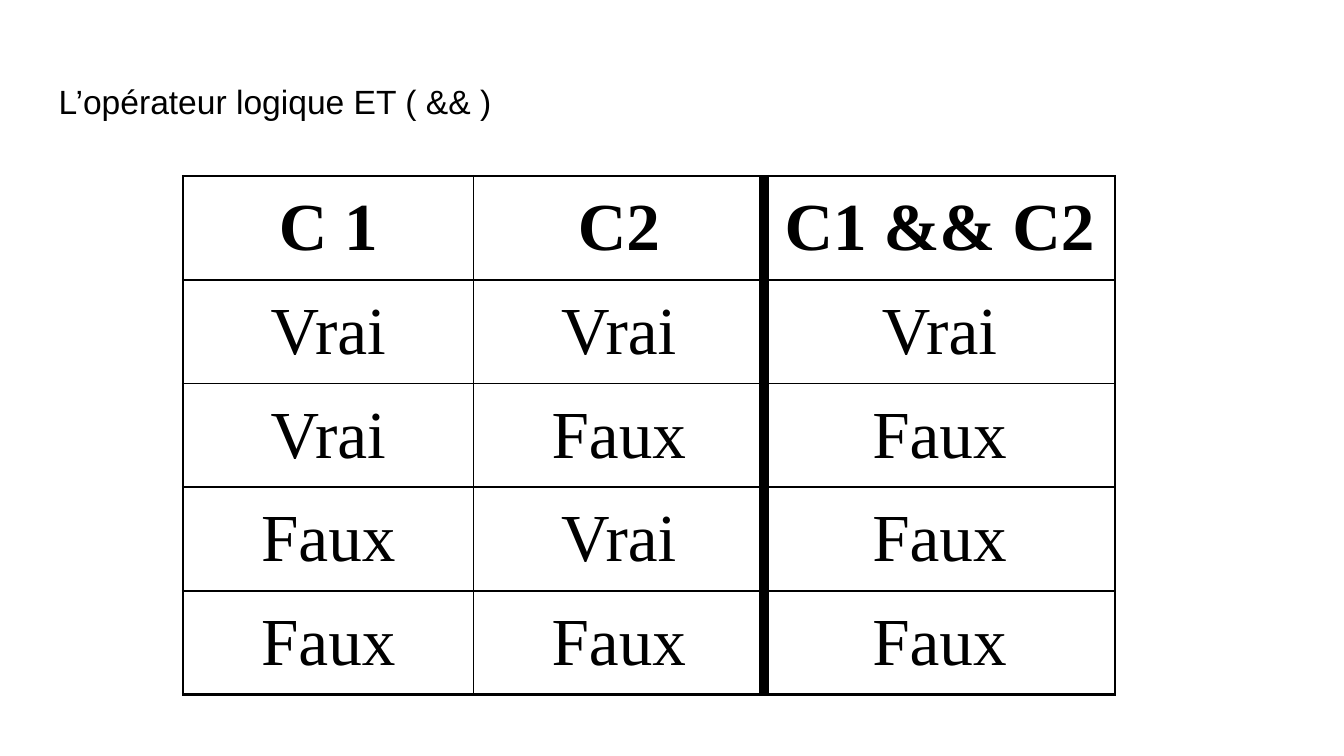
from dataclasses import dataclass

from lxml.etree import SubElement
from pptx import Presentation
from pptx.dml.color import RGBColor
from pptx.enum.text import MSO_ANCHOR, PP_ALIGN
from pptx.oxml.ns import qn
from pptx.util import Cm, Pt


@dataclass(frozen=True)
class Theme:
    """Colours, fonts and sizes of the slide."""

    ink: str = "000000"
    title_font: str = "Arial"
    title_size: int = 18
    table_font: str = "Times New Roman"
    table_size: int = 36


THEME = Theme()
TRUTH_TABLE = [
    ("C 1", "C2", "C1 && C2"),
    ("Vrai", "Vrai", "Vrai"),
    ("Vrai", "Faux", "Faux"),
    ("Faux", "Vrai", "Faux"),
    ("Faux", "Faux", "Faux"),
]
COLUMN_WIDTHS = (5.49, 5.49, 6.63)
ROW_HEIGHT = 1.96
VERTICAL_RULES = (1.5, 1, 6, 1.5)
HORIZONTAL_RULES = (1.5, 1, 1, 1, 1, 1.5)


def style_paragraph(paragraph, font_name, size, alignment, bold=False):
    """Set the alignment and the font of every run."""
    paragraph.alignment = alignment
    for run in paragraph.runs:
        run.font.name = font_name
        run.font.size = Pt(size)
        run.font.bold = bold
        run.font.color.rgb = RGBColor.from_string(THEME.ink)


def add_title(slide, heading):
    """Place and format the title placeholder."""
    title = slide.shapes.title
    title.left, title.top, title.width, title.height = Cm(0.86), Cm(1.27), Cm(23.67), Cm(1.6)
    frame = title.text_frame
    frame.text = heading
    frame.word_wrap = True
    frame.vertical_anchor = MSO_ANCHOR.TOP
    frame.margin_left = frame.margin_right = Cm(0.25)
    frame.margin_top = frame.margin_bottom = Cm(0.25)
    style_paragraph(frame.paragraphs[0], THEME.title_font, THEME.title_size, PP_ALIGN.LEFT)


def set_borders(cell, rule_widths):
    """Draw the left, right, top and bottom rules of a cell."""
    properties = cell._tc.get_or_add_tcPr()
    for position, (side, width) in enumerate(zip("LRTB", rule_widths)):
        rule = SubElement(properties, qn(f"a:ln{side}"), w=str(Pt(width)), cmpd="sng")
        color = SubElement(SubElement(rule, qn("a:solidFill")), qn("a:srgbClr"))
        color.set("val", THEME.ink)
        SubElement(rule, qn("a:prstDash"), val="solid")
        properties.insert(position, rule)


def format_cell(cell, value, is_header):
    """Write one centred value without a fill."""
    cell.text_frame.text = value
    cell.vertical_anchor = MSO_ANCHOR.MIDDLE
    cell.margin_left = cell.margin_right = Cm(0.18)
    cell.margin_top = cell.margin_bottom = Cm(0)
    cell.fill.background()
    style_paragraph(cell.text_frame.paragraphs[0], THEME.table_font,
                    THEME.table_size, PP_ALIGN.CENTER, is_header)


def add_truth_table(slide):
    """Add the truth table with its ruled grid."""
    row_count, column_count = len(TRUTH_TABLE), len(COLUMN_WIDTHS)
    table = slide.shapes.add_table(
        row_count, column_count, Cm(3.46), Cm(3.33),
        Cm(sum(COLUMN_WIDTHS)), Cm(ROW_HEIGHT * row_count)).table
    table.first_row = table.horz_banding = False
    for column, width in zip(table.columns, COLUMN_WIDTHS):
        column.width = Cm(width)
    for r, values in enumerate(TRUTH_TABLE):
        table.rows[r].height = Cm(ROW_HEIGHT)
        for c, value in enumerate(values):
            cell = table.cell(r, c)
            format_cell(cell, value, is_header=r == 0)
            set_borders(cell, VERTICAL_RULES[c:c + 2] + HORIZONTAL_RULES[r:r + 2])


def main():
    """Build and save the slide."""
    presentation = Presentation()
    presentation.slide_width, presentation.slide_height = Cm(25.4), Cm(14.29)
    slide = presentation.slides.add_slide(presentation.slide_layouts[5])
    add_title(slide, "L’opérateur logique ET ( && )")
    add_truth_table(slide)
    presentation.save("out.pptx")


if __name__ == "__main__":
    main()
